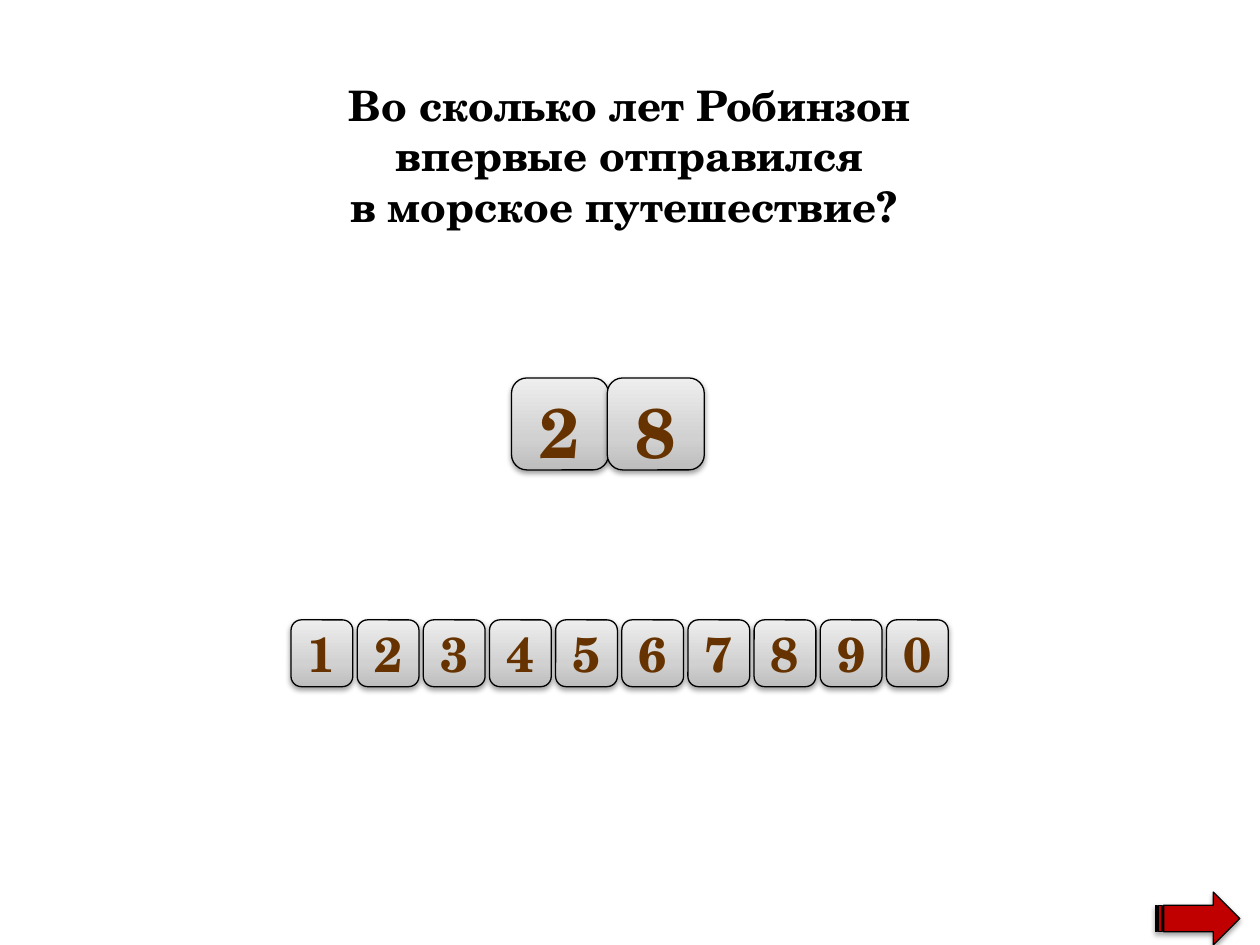
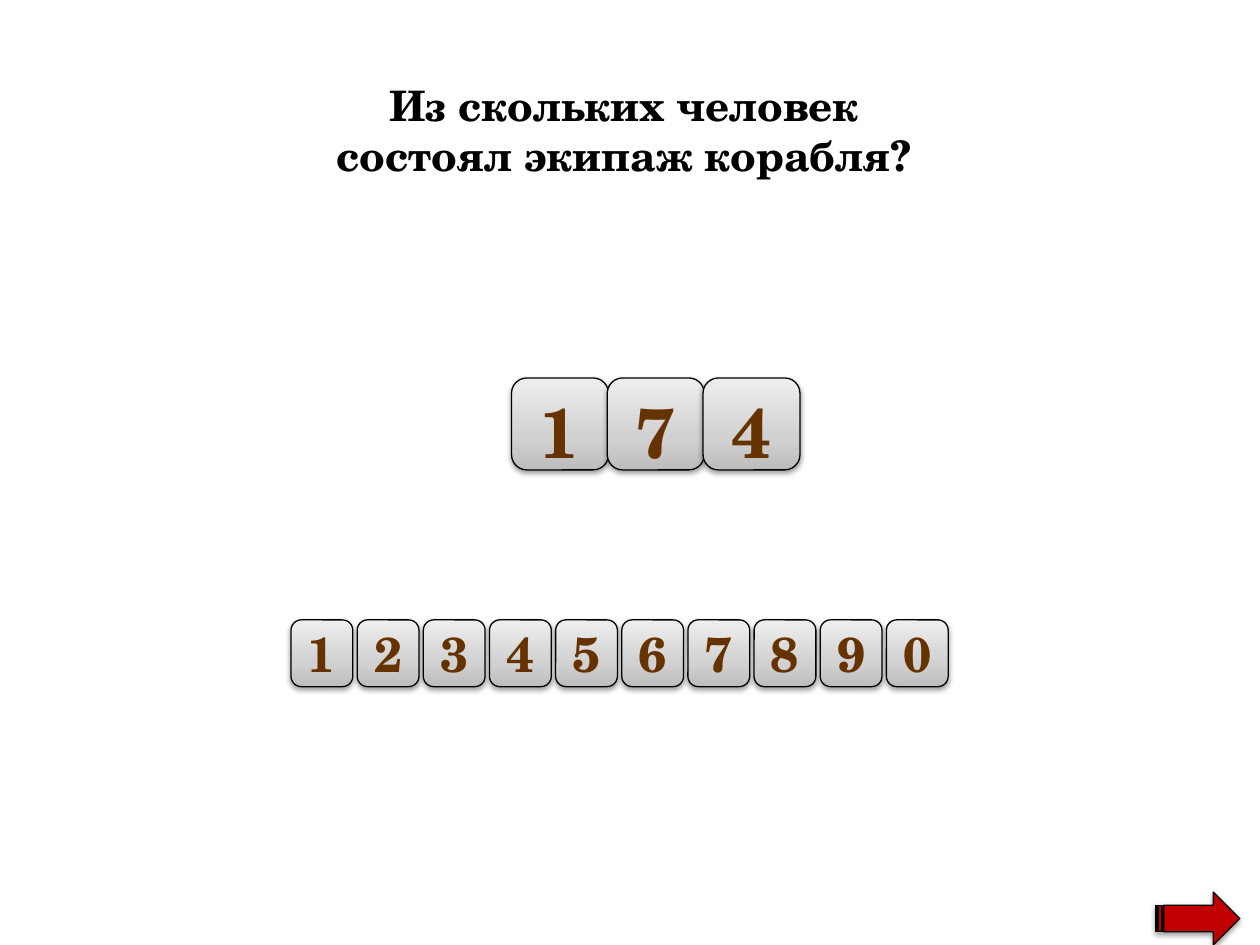
from dataclasses import dataclass

from lxml.etree import SubElement
from pptx import Presentation
from pptx.dml.color import RGBColor
from pptx.enum.shapes import MSO_SHAPE
from pptx.enum.text import MSO_ANCHOR, PP_ALIGN
from pptx.oxml import parse_xml
from pptx.oxml.ns import nsdecls, qn
from pptx.util import Inches, Pt

QUESTIONS = [
    {
        "question": ["Во сколько лет Робинзон", " впервые отправился ", "в морское путешествие? "],
        "answer": "28",
    },
    {
        "question": ["Из скольких человек ", "состоял экипаж корабля? "],
        "answer": "174",
    },
]
KEYPAD = "1234567890"


@dataclass(frozen=True)
class Theme:
    font: str = "TeX Gyre Schola"
    ink: str = "000000"
    digit: str = "663300"
    accent: str = "C00000"
    metal: tuple = ((0, "BDBDBD"), (35, "D1D1D1"), (100, "EEEEEE"))
    question_size: int = 24
    key_size: int = 28
    answer_size: int = 40
    line_width: float = 0.75


THEME = Theme()
COLUMNS, ROWS = 100, 75
WIDTH, HEIGHT = Inches(10), Inches(7.5)

QUESTION_TOP, QUESTION_PADDING, QUESTION_LINE = 5.8, 1, 4.03
KEYPAD_LEFT, KEYPAD_TOP, KEY_PITCH = 23.1, 49.2, 5.25
KEY_WIDTH, KEY_HEIGHT = 4.9, 5.3
ANSWER_LEFT, ANSWER_TOP, ANSWER_PITCH = 40.6, 30, 7.6
ANSWER_WIDTH, ANSWER_HEIGHT = 7.7, 7.3
NEXT_ARROW = (91.7, 70.8, 6.7, 4.2)
KEY_INSETS = (0.06, 0.03, 0.06, 0.03)
ANSWER_INSETS = (0.1, 0.05, 0.1, 0)


def place(left, top, width, height):
    column, row = WIDTH / COLUMNS, HEIGHT / ROWS
    return [round(length) for length in (left * column, top * row, width * column, height * row)]


def write(frame, lines, size, color):
    for index, line in enumerate(lines):
        para = frame.paragraphs[0] if index == 0 else frame.add_paragraph()
        para.alignment = PP_ALIGN.CENTER
        span = para.add_run()
        span.text = line
        span.font.name = THEME.font
        span.font.size = Pt(size)
        span.font.bold = True
        span.font.color.rgb = RGBColor.from_string(color)


def add_raised_shape(page, kind, area):
    shape = page.shapes.add_shape(kind, *place(*area))
    shape.line.color.rgb = RGBColor.from_string(THEME.ink)
    shape.line.width = Pt(THEME.line_width)
    shape.shadow.inherit = False
    effects = shape._element.spPr.find(qn("a:effectLst"))
    shadow = SubElement(
        effects, qn("a:outerShdw"), blurRad="40000", dist="20000", dir="5400000", rotWithShape="0"
    )
    tint = SubElement(shadow, qn("a:srgbClr"), val=THEME.ink)
    SubElement(tint, qn("a:alpha"), val="38000")
    return shape


def add_tile(page, area, digit, size, insets, anchor):
    tile = add_raised_shape(page, MSO_SHAPE.ROUNDED_RECTANGLE, area)
    stops = "".join(
        f'<a:gs pos="{share * 1000}"><a:srgbClr val="{color}"/></a:gs>' for share, color in THEME.metal
    )
    gradient = parse_xml(
        f'<a:gradFill {nsdecls("a")}><a:gsLst>{stops}</a:gsLst><a:lin ang="16200000" scaled="0"/></a:gradFill>'
    )
    tile._element.spPr.find(qn("a:prstGeom")).addnext(gradient)
    frame = tile.text_frame
    frame.word_wrap = True
    frame.vertical_anchor = anchor
    frame.margin_left, frame.margin_top, frame.margin_right, frame.margin_bottom = map(Inches, insets)
    write(frame, [digit], size, THEME.digit)
    return tile


def outline_digit(tile):
    span = tile.text_frame.paragraphs[0].runs[0]
    outline = parse_xml(
        f'<a:ln {nsdecls("a")} w="{Pt(THEME.line_width)}"><a:solidFill>'
        f'<a:srgbClr val="{THEME.accent}"/></a:solidFill></a:ln>'
    )
    span.font._element.insert(0, outline)


def add_question(page, lines):
    height = QUESTION_PADDING + QUESTION_LINE * len(lines)
    box = page.shapes.add_textbox(*place(0, QUESTION_TOP, COLUMNS, height))
    box.text_frame.word_wrap = True
    write(box.text_frame, lines, THEME.question_size, THEME.ink)


def add_keypad(page):
    for index, digit in enumerate(KEYPAD):
        area = (KEYPAD_LEFT + index * KEY_PITCH, KEYPAD_TOP, KEY_WIDTH, KEY_HEIGHT)
        add_tile(page, area, digit, THEME.key_size, KEY_INSETS, MSO_ANCHOR.MIDDLE)


def add_answer(page, digits):
    for index, digit in enumerate(digits):
        area = (ANSWER_LEFT + index * ANSWER_PITCH, ANSWER_TOP, ANSWER_WIDTH, ANSWER_HEIGHT)
        tile = add_tile(page, area, digit, THEME.answer_size, ANSWER_INSETS, MSO_ANCHOR.TOP)
        outline_digit(tile)


def add_next_arrow(page):
    arrow = add_raised_shape(page, MSO_SHAPE.STRIPED_RIGHT_ARROW, NEXT_ARROW)
    arrow.fill.solid()
    arrow.fill.fore_color.rgb = RGBColor.from_string(THEME.accent)


def main():
    deck = Presentation()
    deck.slide_width, deck.slide_height = WIDTH, HEIGHT
    for item in QUESTIONS:
        page = deck.slides.add_slide(deck.slide_layouts[6])
        add_keypad(page)
        add_next_arrow(page)
        add_question(page, item["question"])
        add_answer(page, item["answer"])
    deck.save("out.pptx")


if __name__ == "__main__":
    main()
